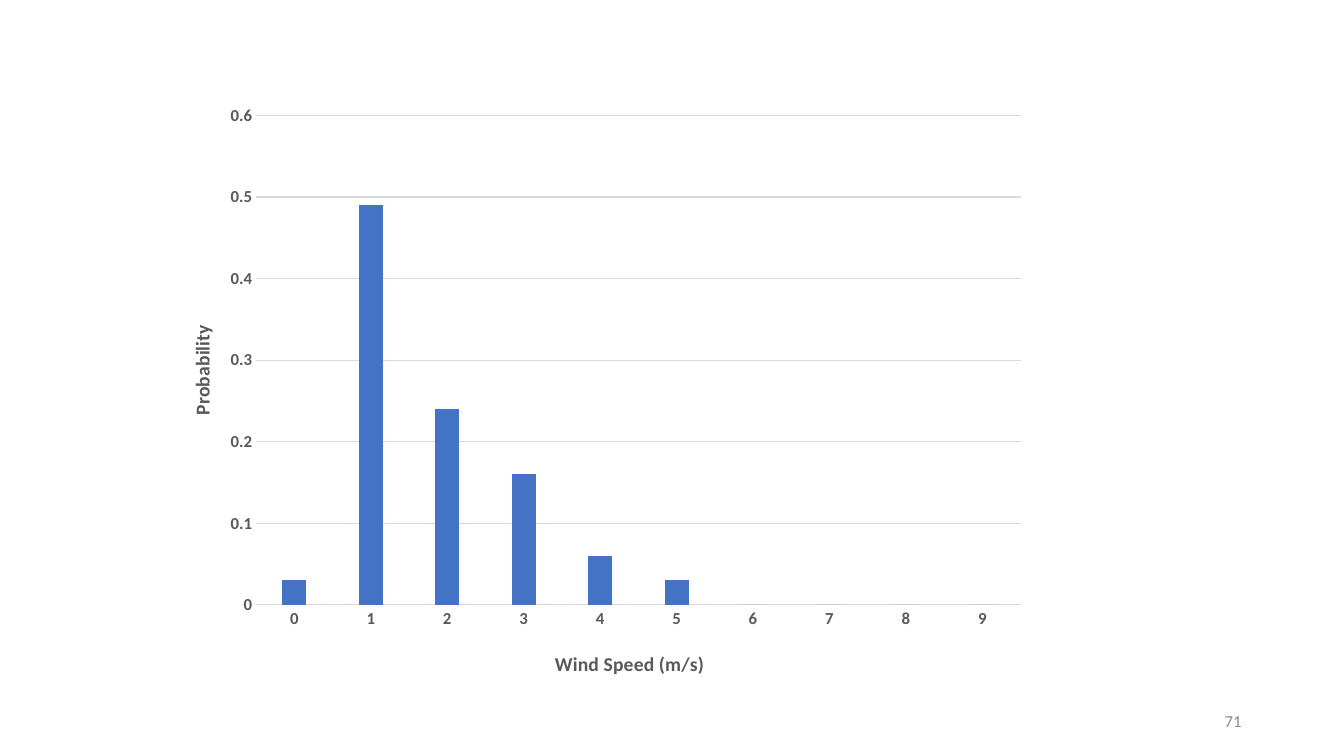
from lxml import etree
from pptx import Presentation
from pptx.chart.data import CategoryChartData
from pptx.dml.color import RGBColor
from pptx.enum.chart import XL_CHART_TYPE, XL_TICK_MARK
from pptx.enum.text import MSO_ANCHOR, PP_ALIGN
from pptx.oxml.ns import qn
from pptx.util import Pt

COLUMN_CLUSTERED = XL_CHART_TYPE.COLUMN_CLUSTERED
NO_TICK = XL_TICK_MARK.NONE
MIDDLE = MSO_ANCHOR.MIDDLE
RIGHT = PP_ALIGN.RIGHT

EMU_PER_PX = 9525
SLIDE_SIZE = (1280, 720)
CHART_BOX = (152, 89, 837, 569)
NUMBER_BOX = (904, 667, 288, 38)
FONT = "Calibri"
COLORS = {"bar": "4472C4", "label": "595959", "grid": "D9D9D9", "number": "8C8C8C"}
PROBABILITIES = (0.03, 0.49, 0.24, 0.16, 0.06, 0.03, 0, 0, 0, 0)


def px(length):
    return length * EMU_PER_PX


def color(name):
    return RGBColor.from_string(COLORS[name])


def style_font(font, size, color_name, bold=False):
    font.name = FONT
    font.size = Pt(size)
    font.bold = bold
    font.color.rgb = color(color_name)


def style_line(line):
    line.color.rgb = color("grid")
    line.width = Pt(0.75)


def place_layout(parent, previous, chart_size, target=None, **lengths):
    for old_layout in parent.findall(qn("c:layout")):
        parent.remove(old_layout)
    layout = etree.Element(qn("c:layout"))
    manual = etree.SubElement(layout, qn("c:manualLayout"))
    settings = {"layoutTarget": target} if target else {}
    settings |= {"xMode": "edge", "yMode": "edge"}
    for key, length in lengths.items():
        total = chart_size[0] if key in ("x", "w") else chart_size[1]
        settings[key] = str(length / total)
    for key, value in settings.items():
        etree.SubElement(manual, qn(f"c:{key}")).set("val", value)
    if previous is None:
        parent.insert(0, layout)
    else:
        previous.addnext(layout)


def style_axis(axis, title, left, top, chart_size):
    axis.major_tick_mark = NO_TICK
    axis.minor_tick_mark = NO_TICK
    style_font(axis.tick_labels.font, 12, "label", True)
    text_frame = axis.axis_title.text_frame
    text_frame.text = title
    style_font(text_frame.paragraphs[0].runs[0].font, 14, "label", True)
    element = axis.axis_title._element
    place_layout(element, element.find(qn("c:tx")), chart_size, x=left, y=top)


def add_wind_chart(slide, box):
    chart_size = box[2:]
    chart_data = CategoryChartData()
    chart_data.categories = [str(speed) for speed in range(len(PROBABILITIES))]
    chart_data.add_series("Series 1", PROBABILITIES)
    frame = slide.shapes.add_chart(COLUMN_CLUSTERED, *map(px, box), chart_data)
    chart = frame.chart
    chart.has_legend = False
    chart.has_title = False
    style_font(chart.font, 10, "label")

    plot = chart.plots[0]
    plot.gap_width = 219
    plot.overlap = -27
    plot.vary_by_categories = False
    bar_fill = plot.series[0].format.fill
    bar_fill.solid()
    bar_fill.fore_color.rgb = color("bar")

    style_axis(chart.category_axis, "Wind Speed (m/s)", 373, 527, chart_size)
    style_line(chart.category_axis.format.line)
    value_axis = chart.value_axis
    style_axis(value_axis, "Probability", 24, 217, chart_size)
    value_axis.minimum_scale = 0
    value_axis.maximum_scale = 0.6
    value_axis.major_unit = 0.1
    value_axis.format.line.fill.background()
    style_line(value_axis.major_gridlines.format.line)
    value_axis.tick_labels.number_format = "General"
    value_axis.tick_labels.number_format_is_linked = False

    plot_area = chart._chartSpace.chart.plotArea
    place_layout(plot_area, None, chart_size, "inner", x=92, y=21, w=728, h=466)


def add_slide_number(slide, box):
    text_frame = slide.shapes.add_textbox(*map(px, box)).text_frame
    text_frame.word_wrap = True
    text_frame.vertical_anchor = MIDDLE
    text_frame.text = "71"
    paragraph = text_frame.paragraphs[0]
    paragraph.alignment = RIGHT
    style_font(paragraph.runs[0].font, 12, "number")


def main():
    presentation = Presentation()
    presentation.slide_width, presentation.slide_height = map(px, SLIDE_SIZE)
    slide = presentation.slides.add_slide(presentation.slide_layouts[6])
    add_slide_number(slide, NUMBER_BOX)
    add_wind_chart(slide, CHART_BOX)
    presentation.save("out.pptx")


if __name__ == "__main__":
    main()
